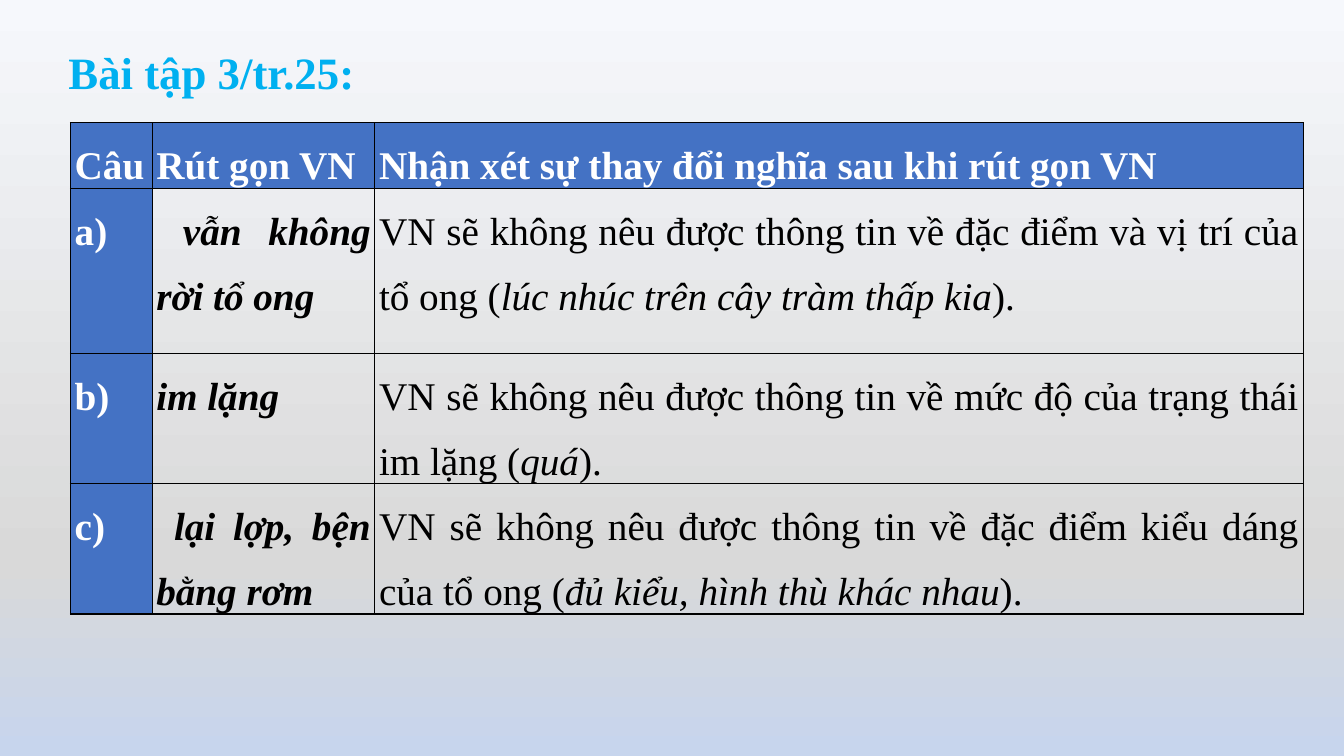
from copy import deepcopy
from typing import NamedTuple

from lxml.etree import SubElement as Sub
from pptx import Presentation
from pptx.dml.color import RGBColor as RGB
from pptx.enum.text import MSO_AUTO_SIZE as Auto, PP_ALIGN as Align
from pptx.oxml.ns import qn
from pptx.util import Pt

FONT = "Times New Roman"
BLUE, WHITE, BLACK, SKY = "4472C4", "FFFFFF", "000000", "00B0F0"
BACK = [(0, "F6F8FC"), (0.74, "D9D9D9"), (1, "C7D5ED")]
NO_STYLE = "{2D5ABB26-0587-4C30-8999-92F81FD0307C}"

COLS = [58.3, 159.1, 663.1]
ROWS = [46.8, 118.1, 82.8, 92.2]
HEADS = ["Câu", "Rút gọn VN", "Nhận xét sự thay đổi nghĩa sau khi rút gọn VN"]


class Item(NamedTuple):
    label: str
    short: str
    note: str
    lost: str  # the words dropped, set in italics inside brackets


ITEMS = [
    Item("a)", " vẫn không rời tổ ong",
         "VN sẽ không nêu được thông tin về đặc điểm và vị trí của tổ ong (",
         "lúc nhúc trên cây tràm thấp kia"),
    Item("b)", "im lặng",
         "VN sẽ không nêu được thông tin về mức độ của trạng thái im lặng (",
         "quá"),
    Item("c)", " lại lợp, bện bằng rơm",
         "VN sẽ không nêu được thông tin về đặc điểm kiểu dáng của tổ ong (",
         "đủ kiểu, hình thù khác nhau"),
]


def rgb(code: str) -> RGB:
    return RGB.from_string(code)


def style(para, size: float, color: str, bold: bool = True) -> None:
    para.alignment = Align.JUSTIFY
    para.line_spacing = 1.5
    font = para.font
    font.name, font.size, font.bold = FONT, Pt(size), bold
    font.color.rgb = rgb(color)


def paint_back(slide) -> None:
    fill = slide.background.fill
    fill.gradient()
    fill.gradient_angle = 270
    stops = next(slide.element.iter(qn("a:gsLst")))
    stops.append(deepcopy(stops[0]))
    for stop, (place, code) in zip(fill.gradient_stops, BACK):
        stop.position = place
        stop.color.rgb = rgb(code)


def add_title(slide, text: str) -> None:
    box = slide.shapes.add_textbox(Pt(41.8), Pt(9.4), Pt(223.9), Pt(65.5))
    frame = box.text_frame
    frame.word_wrap = True
    frame.auto_size = Auto.SHAPE_TO_FIT_TEXT
    frame.text = text
    style(frame.paragraphs[0], 32, SKY)


def set_cell(cell, parts: list[tuple[str, bool]], color: str,
             bold: bool = True, fill: str = "") -> None:
    """Fill one cell with (text, italic) parts and frame it in black."""
    cell.margin_left = cell.margin_right = Pt(3)
    cell.margin_top = cell.margin_bottom = Pt(0)
    para = cell.text_frame.paragraphs[0]
    style(para, 28, color, bold)
    for text, slant in parts:
        run = para.add_run()
        run.text = text
        run.font.italic = slant
    props = cell._tc.get_or_add_tcPr()
    for side in "LRTB":
        line = Sub(props, qn(f"a:ln{side}"), w=str(Pt(1)))
        Sub(Sub(line, qn("a:solidFill")), qn("a:srgbClr"), val=BLACK)
    if fill:
        cell.fill.solid()
        cell.fill.fore_color.rgb = rgb(fill)
    else:
        cell.fill.background()


def add_grid(slide) -> None:
    frame = slide.shapes.add_table(len(ROWS), len(COLS), Pt(50.4), Pt(87.8),
                                   Pt(sum(COLS)), Pt(sum(ROWS)))
    next(frame.element.iter(qn("a:tableStyleId"))).text = NO_STYLE
    table = frame.table
    table.first_row = table.horz_banding = False
    for col, width in zip(table.columns, COLS):
        col.width = Pt(width)
    for row, height in zip(table.rows, ROWS):
        row.height = Pt(height)
    for col, head in enumerate(HEADS):
        set_cell(table.cell(0, col), [(head, False)], WHITE, fill=BLUE)
    for row, item in enumerate(ITEMS, 1):
        label, short, note = table.rows[row].cells
        set_cell(label, [(item.label, False)], WHITE, fill=BLUE)
        set_cell(short, [(item.short, True)], BLACK)
        set_cell(note, [(item.note, False), (item.lost, True), (").", False)],
                 BLACK, bold=False)


def main() -> None:
    deck = Presentation()
    deck.slide_width, deck.slide_height = Pt(960), Pt(540)
    slide = deck.slides.add_slide(deck.slide_layouts[6])
    paint_back(slide)
    add_grid(slide)
    add_title(slide, "Bài tập 3/tr.25:")
    deck.save("out.pptx")


if __name__ == "__main__":
    main()
